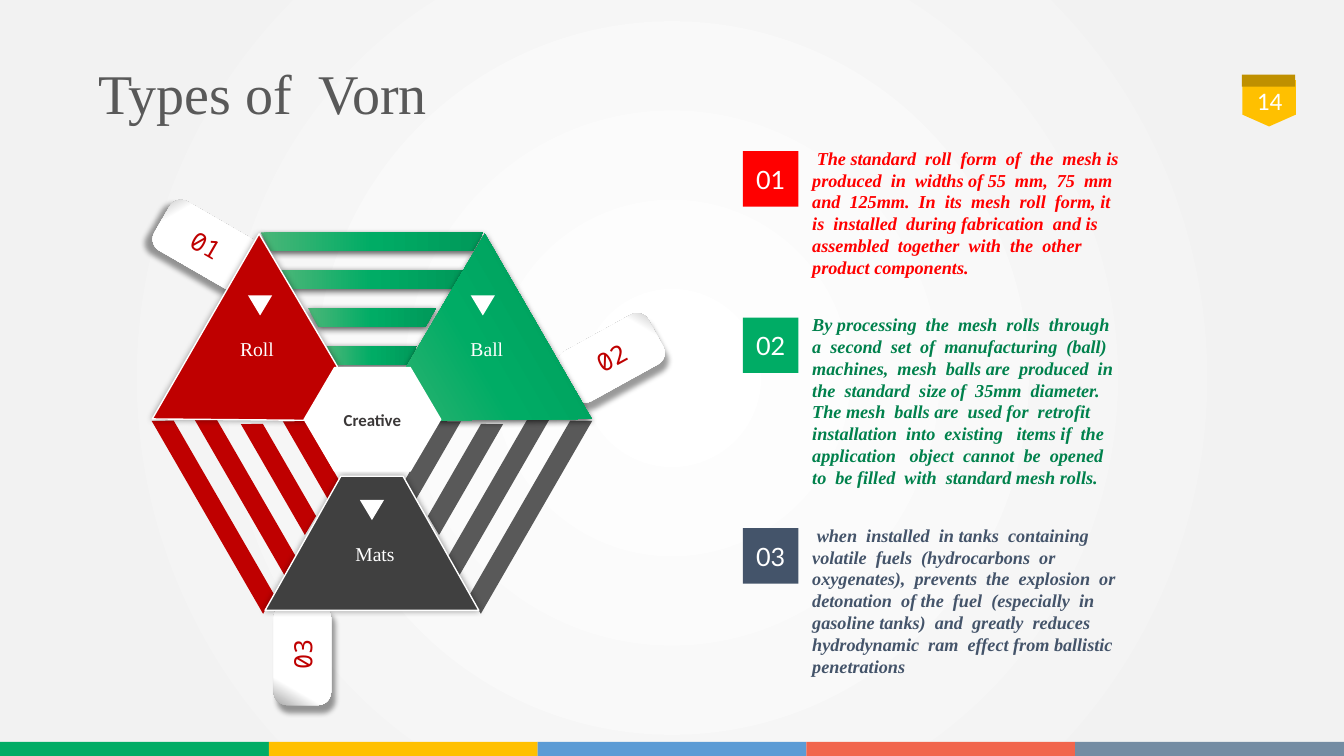
from dataclasses import dataclass
from math import cos, radians, sin

from lxml import etree
from pptx import Presentation
from pptx.dml.color import RGBColor
from pptx.enum.shapes import MSO_SHAPE
from pptx.enum.text import MSO_ANCHOR, PP_ALIGN
from pptx.oxml.ns import qn
from pptx.util import Inches, Pt

RECTANGLE = MSO_SHAPE.RECTANGLE
ROUNDED = MSO_SHAPE.ROUNDED_RECTANGLE
TRAPEZOID = MSO_SHAPE.TRAPEZOID
TRIANGLE = MSO_SHAPE.ISOSCELES_TRIANGLE
HEXAGON = MSO_SHAPE.HEXAGON
HOME_PLATE = MSO_SHAPE.PENTAGON
CENTER, LEFT = PP_ALIGN.CENTER, PP_ALIGN.LEFT
MIDDLE, TOP = MSO_ANCHOR.MIDDLE, MSO_ANCHOR.TOP

CELL = Inches(0.1)  # one column or row of the grid
COLUMNS, ROWS = 133.33, 75
SERIF, MONO, SANS, BADGE_FONT = "Times New Roman", "Noto Sans Mono", "Calibri", "Lato"
COLORS = {
    "white": "FFFFFF", "black": "000000", "mist": "F2F2F2", "silver": "A6A6A6",
    "gray": "595959", "charcoal": "404040", "ink": "3B3838", "slate": "44546A",
    "red": "FF0000", "crimson": "BF0000", "green": "00AC65", "light green": "4BB678",
    "dark green": "00995A", "text green": "00814C", "gold": "FFC000",
    "dark gold": "BF9000", "blue": "5B9BD5", "coral": "F1654C", "steel": "748CA3",
}
GRADIENTS = {
    "green fade": [(0, "light green"), (50, "green"), (100, "dark green")],
    "paper": [(0, "silver"), (21, "white"), (100, "white")],
    "backdrop": [(0, "white"), (81, "mist"), (100, "mist")],
}
HUB_X, HUB_Y = 36.9, 41.9
STRIPE_WIDTHS = [9, 12.7, 18.1, 22.1]
FOOTER_COLORS = ["green", "gold", "blue", "coral", "steel"]


@dataclass
class Box:
    left: float
    top: float
    width: float
    height: float

    def lengths(self) -> list[int]:
        return [round(side * CELL) for side in (self.left, self.top, self.width, self.height)]


@dataclass
class Shadow:
    opacity: int
    blur: float
    distance: float
    angle: int


@dataclass
class TextStyle:
    size: float
    font: str
    color: str
    bold: bool = False
    italic: bool = False
    align: PP_ALIGN = CENTER
    anchor: MSO_ANCHOR = MIDDLE
    spacing: float | None = None


@dataclass
class Wedge:
    label: str
    fill: str
    rotation: int
    distance: float
    outline: str | None
    shadow: Shadow
    marker: tuple[float, float]
    label_at: tuple[float, float]


@dataclass
class Tab:
    number: str
    box: Box
    rotation: float
    gradient_angle: int
    shadow_angle: int


@dataclass
class Entry:
    number: str
    top: float
    height: float
    fill: str
    text_color: str
    text: str


GREEN_SHADOW = Shadow(63, 4.5, 1.5, 90)
GLOW = Shadow(40, 5, 0, 0)
STRIPES = [(180, "green fade", GREEN_SHADOW), (300, "gray", None), (60, "crimson", None)]
WEDGES = [
    Wedge("Mats", "charcoal", 0, 12, "white", GLOW, (35.7, 49.6), (29.2, 53.3)),
    Wedge("Ball", "green fade", 240, 12.4, None, GREEN_SHADOW, (46.7, 29.3), (40.3, 32.9)),
    Wedge("Roll", "crimson", 120, 12.4, "white", GLOW, (24.6, 29.3), (17.5, 32.9)),
]
TABS = [
    Tab("02", Box(55.6, 32.7, 10.1, 5.6), 331.1, 150, 66),
    Tab("03", Box(25, 62.1, 10, 5.7), 270, 30, 66),
    Tab("01", Box(15.4, 21.5, 10.1, 5.6), 30, 30, 150),
]
ENTRIES = [
    Entry("01", 15, 13.5, "red", "red",
          " The standard  roll  form  of  the  mesh is  produced  in  widths of 55  mm,  75  mm  "
          "and  125mm.  In  its  mesh  roll  form, it is  installed  during fabrication  and is  "
          "assembled  together  with  the  other  product components."),
    Entry("02", 31.5, 21.8, "green", "text green",
          "By processing  the  mesh  rolls  through  a  second  set  of  manufacturing  (ball)  "
          "machines,  mesh  balls are  produced  in the  standard  size of  35mm  diameter.  "
          "The mesh  balls are  used for  retrofit  installation  into  existing   items if  the  "
          "application   object  cannot  be  opened  to  be filled  with  standard mesh rolls."),
    Entry("03", 52.4, 15.6, "slate", "slate",
          " when  installed  in tanks  containing  volatile  fuels  (hydrocarbons  or  "
          "oxygenates),  prevents  the  explosion  or  detonation  of the  fuel  (especially  in  "
          "gasoline tanks)  and  greatly  reduces  hydrodynamic  ram  effect from ballistic  "
          "penetrations"),
]


def rgb(name: str) -> RGBColor:
    return RGBColor.from_string(COLORS[name])


def apply_gradient(fill, owner, name: str, angle: int | None) -> None:
    """Fill with a named gradient; without an angle it runs outwards from the centre."""
    fill.gradient()
    gradient = owner.find(".//" + qn("a:gradFill"))
    for child in list(gradient):
        gradient.remove(child)
    gradient.set("rotWithShape", "1")
    stops = etree.SubElement(gradient, qn("a:gsLst"))
    for position, color in GRADIENTS[name]:
        stop = etree.SubElement(stops, qn("a:gs"), pos=str(position * 1000))
        etree.SubElement(stop, qn("a:srgbClr"), val=COLORS[color])
    if angle is None:
        circle = etree.SubElement(gradient, qn("a:path"), {"path": "circle"})
        etree.SubElement(circle, qn("a:fillToRect"), dict.fromkeys("ltrb", "50000"))
    else:
        etree.SubElement(gradient, qn("a:lin"), ang=str(angle * 60000), scaled="0")


def add_shadow(shape, shadow: Shadow) -> None:
    effects = shape._element.spPr.find(qn("a:effectLst"))
    outer = etree.SubElement(effects, qn("a:outerShdw"), {
        "blurRad": str(Pt(shadow.blur)), "dist": str(Pt(shadow.distance)),
        "dir": str(shadow.angle * 60000), "algn": "ctr", "rotWithShape": "0"})
    color = etree.SubElement(outer, qn("a:srgbClr"), val=COLORS["black"])
    etree.SubElement(color, qn("a:alpha"), val=str(shadow.opacity * 1000))


def add_figure(slide, kind: MSO_SHAPE, box: Box, fill: str, rotation: float = 0,
               adjustments: tuple[float, ...] = (), gradient_angle: int = 90,
               outline: str | None = None, shadow: Shadow | None = None):
    shape = slide.shapes.add_shape(kind, *box.lengths())
    shape.rotation = rotation
    for index, value in enumerate(adjustments):
        shape.adjustments[index] = value
    if fill in GRADIENTS:
        apply_gradient(shape.fill, shape._element.spPr, fill, gradient_angle)
    else:
        shape.fill.solid()
        shape.fill.fore_color.rgb = rgb(fill)
    if outline:
        shape.line.color.rgb = rgb(outline)
        shape.line.width = Pt(1)
    else:
        shape.line.fill.background()
    shape.shadow.inherit = False
    if shadow:
        add_shadow(shape, shadow)
    return shape


def write(shape, text: str, style: TextStyle) -> None:
    frame = shape.text_frame
    frame.word_wrap = True
    frame.vertical_anchor = style.anchor
    paragraph = frame.paragraphs[0]
    paragraph.text = text
    paragraph.alignment = style.align
    paragraph.line_spacing = style.spacing
    font = paragraph.font
    font.size, font.name = Pt(style.size), style.font
    font.bold, font.italic = style.bold, style.italic
    font.color.rgb = rgb(style.color)


def add_text(slide, box: Box, text: str, style: TextStyle) -> None:
    write(slide.shapes.add_textbox(*box.lengths()), text, style)


def add_trapezoid(slide, width: float, height: float, rotation: int, distance: float,
                  fill: str, **options) -> None:
    """Place a trapezoid away from the hub, its wide side facing outwards."""
    x = HUB_X - distance * sin(radians(rotation))
    y = HUB_Y + distance * cos(radians(rotation))
    box = Box(x - width / 2, y - height / 2, width, height)
    add_figure(slide, TRAPEZOID, box, fill, rotation, (0.565,), **options)


def draw_frame(slide) -> None:
    apply_gradient(slide.background.fill, slide._element.cSld, "backdrop", None)
    add_figure(slide, HOME_PLATE, Box(123.6, 7.6, 4.6, 5.3), "gold", 90, (0.255,))
    add_figure(slide, RECTANGLE, Box(123.2, 7.4, 5.3, 1.2), "dark gold")
    width = COLUMNS / len(FOOTER_COLORS)
    for index, color in enumerate(FOOTER_COLORS):
        add_figure(slide, RECTANGLE, Box(index * width, 73.6, width, 1.4), color)
    add_text(slide, Box(8.8, 5.6, 117, 8), "Types of  Vorn",
             TextStyle(40, SERIF, "gray", align=LEFT, spacing=0.9))
    add_text(slide, Box(122.9, 7.4, 6.1, 5.2), "14", TextStyle(18, SANS, "white"))


def draw_wheel(slide) -> None:
    for tab in TABS:
        shape = add_figure(slide, ROUNDED, tab.box, "paper", tab.rotation, (0.229,),
                           tab.gradient_angle, shadow=Shadow(40, 4, 6, tab.shadow_angle))
        write(shape, tab.number, TextStyle(18, MONO, "crimson"))
    for rotation, fill, shadow in STRIPES:
        for index, width in enumerate(STRIPE_WIDTHS):
            add_trapezoid(slide, width, 1.9, rotation, 6.65 + 3.75 * index, fill,
                          gradient_angle=180, shadow=shadow)
    for wedge in WEDGES:
        add_trapezoid(slide, 21.2, 13.3, wedge.rotation, wedge.distance, wedge.fill,
                      outline=wedge.outline, shadow=wedge.shadow)
    hub = add_figure(slide, HEXAGON, Box(30.1, 36.4, 13.7, 10.4), "white",
                     adjustments=(0.294, 1.155))
    write(hub, "Creative", TextStyle(12, SANS, "ink", bold=True))
    for wedge in WEDGES:
        add_figure(slide, TRIANGLE, Box(*wedge.marker, 2.4, 2), "white", 180)
        add_text(slide, Box(*wedge.label_at, 16, 3.4), wedge.label,
                 TextStyle(14, SERIF, "white", anchor=TOP))


def draw_entry(slide, entry: Entry) -> None:
    badge = add_figure(slide, RECTANGLE, Box(73.7, entry.top, 5.5, 5.5), entry.fill)
    write(badge, entry.number, TextStyle(18, BADGE_FONT, "white"))
    add_text(slide, Box(79.6, entry.top - 0.9, 33, entry.height), entry.text,
             TextStyle(13, SERIF, entry.text_color, True, True, LEFT, TOP, Pt(15.6)))


def main() -> None:
    presentation = Presentation()
    presentation.slide_width = round(COLUMNS * CELL)
    presentation.slide_height = ROWS * CELL
    slide = presentation.slides.add_slide(presentation.slide_layouts[6])
    draw_frame(slide)
    draw_wheel(slide)
    for entry in ENTRIES:
        draw_entry(slide, entry)
    presentation.save("out.pptx")


if __name__ == "__main__":
    main()
